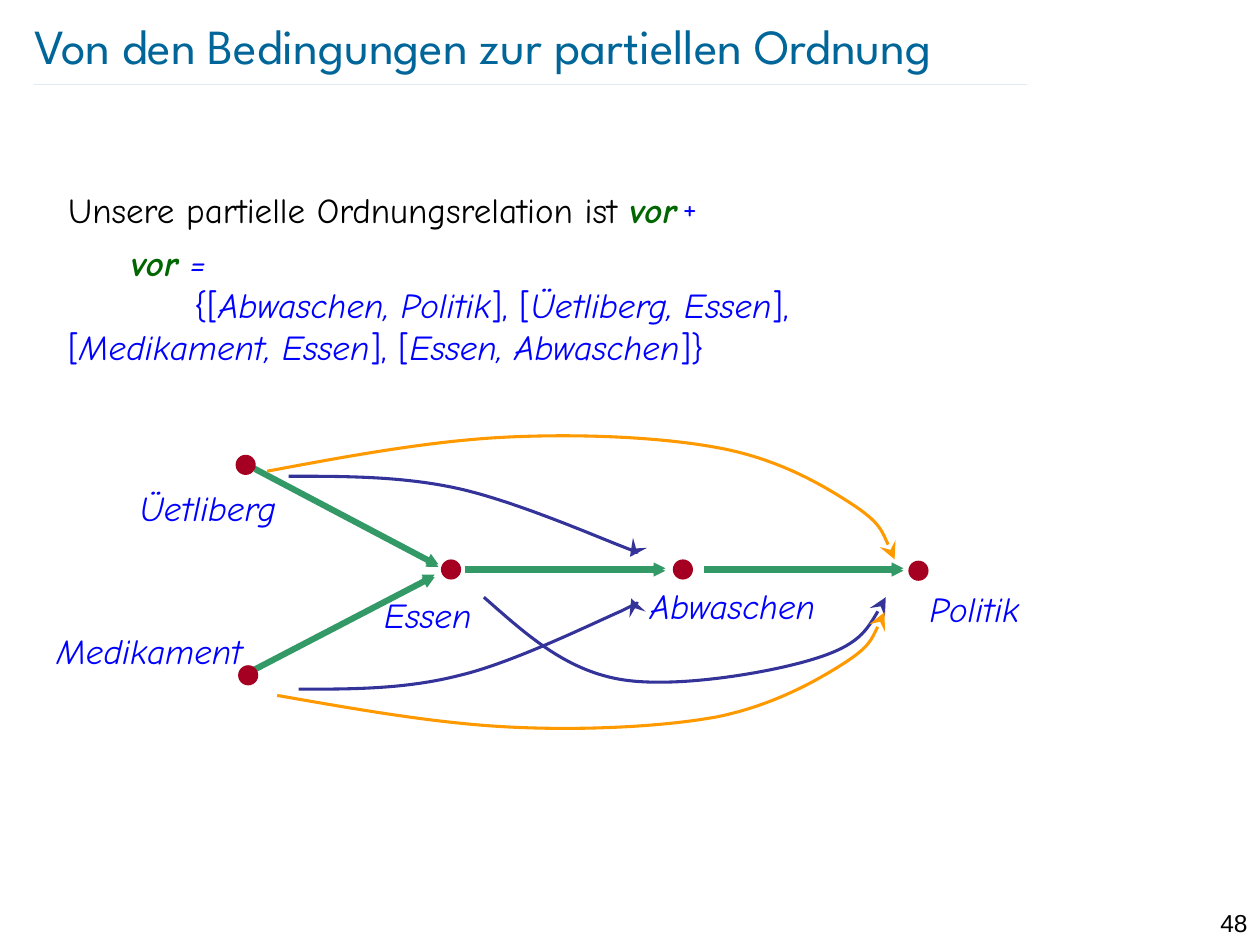
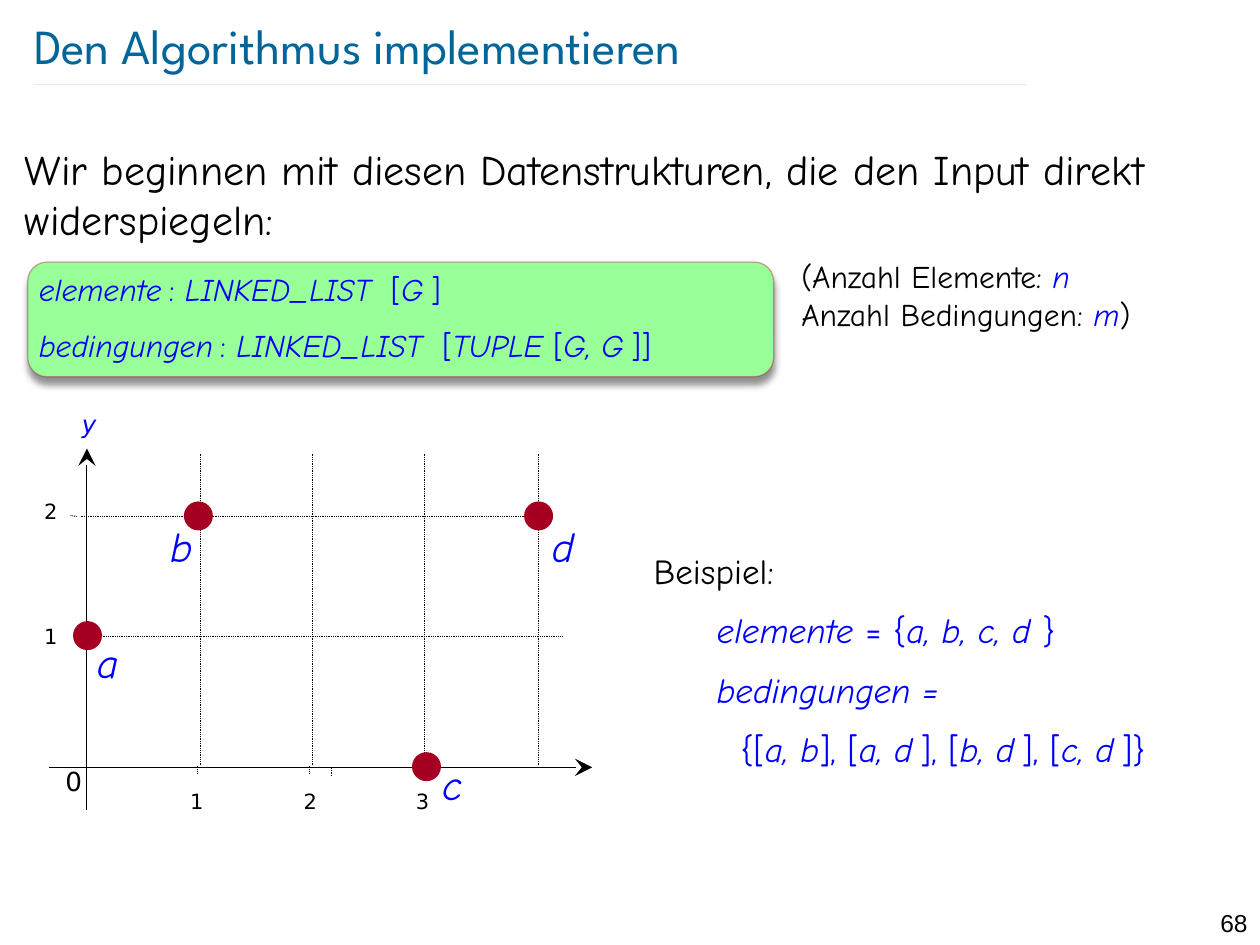
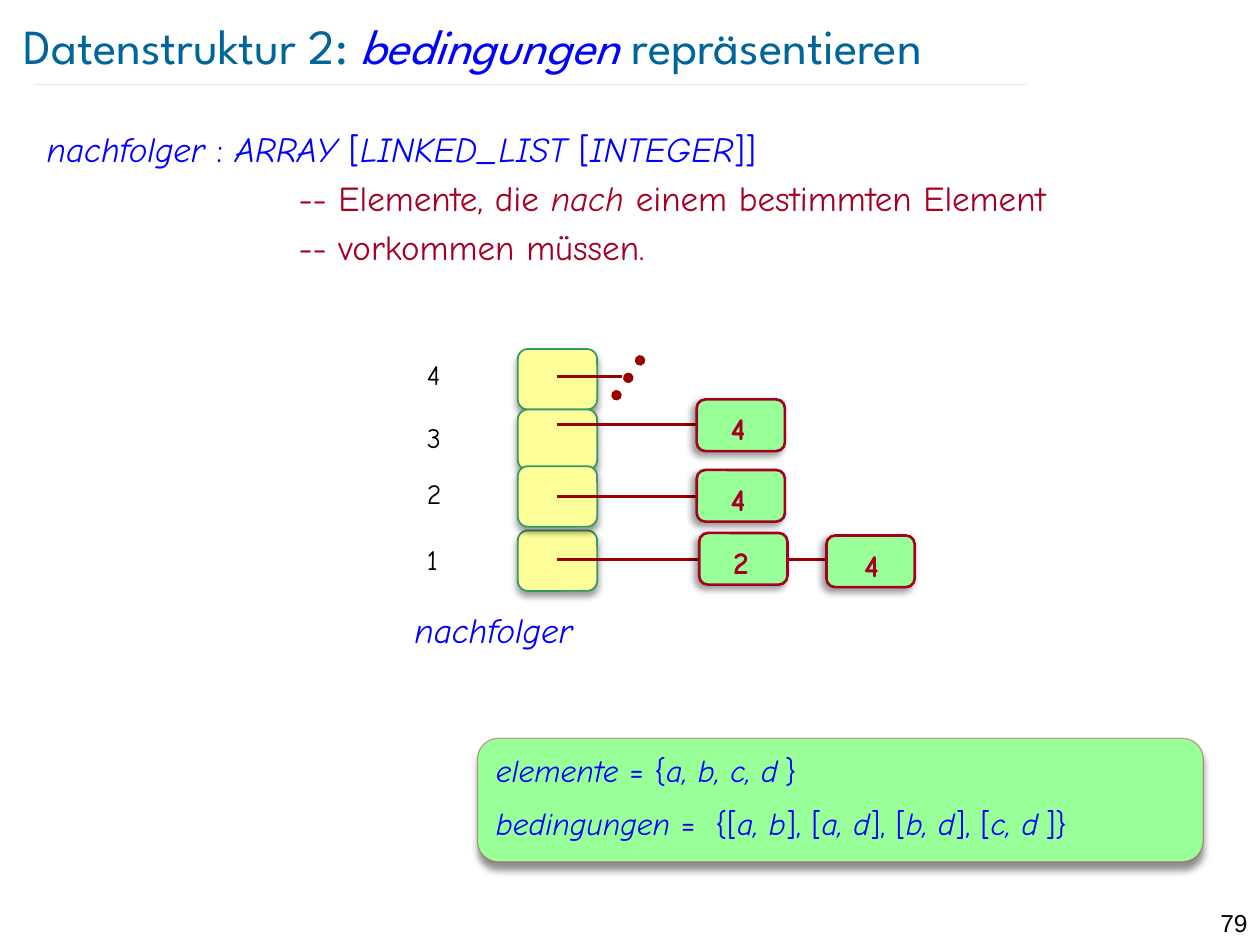
from dataclasses import dataclass
from itertools import groupby
from typing import NamedTuple

from lxml import etree
from pptx import Presentation
from pptx.dml.color import RGBColor
from pptx.enum.dml import MSO_LINE
from pptx.enum.shapes import MSO_CONNECTOR, MSO_SHAPE
from pptx.enum.text import MSO_ANCHOR, MSO_AUTO_SIZE, PP_ALIGN
from pptx.oxml.ns import qn
from pptx.util import Emu, Pt

ELLIPSE = MSO_SHAPE.OVAL
ROUND_RECTANGLE = MSO_SHAPE.ROUNDED_RECTANGLE
STRAIGHT = MSO_CONNECTOR.STRAIGHT
DOTTED = MSO_LINE.ROUND_DOT
MIDDLE = MSO_ANCHOR.MIDDLE
TOP = MSO_ANCHOR.TOP
LEFT = PP_ALIGN.LEFT
RIGHT = PP_ALIGN.RIGHT
NO_FIT = MSO_AUTO_SIZE.NONE
EMU_PER_PX = 9144
NARROW_GAP = "~"
WIDE_GAP = "^"


@dataclass(frozen=True)
class Theme:
    heading_font: str = "League Spartan"
    body_font: str = "Comic Neue"
    axis_font: str = "DejaVu Sans"
    number_font: str = "Arial"
    heading: str = "006699"
    black: str = "000000"
    blue: str = "0000FF"
    dark_green: str = "006600"
    green: str = "339966"
    light_green: str = "99FF99"
    yellow: str = "FFFF99"
    red: str = "A50021"
    dark_red: str = "990000"
    indigo: str = "333399"
    orange: str = "FF9900"
    title_size: int = 28
    lead_size: int = 24
    body_size: int = 20
    code_size: int = 18
    index_size: int = 16
    number_size: int = 14
    axis_size: int = 12
    narrow_gap_size: int = 12
    superscript_size: int = 32


THEME = Theme()


class Box(NamedTuple):
    left: int
    top: int
    width: int
    height: int


class Span(NamedTuple):
    markup: str
    color: str = THEME.blue
    bold: bool = False
    size: int = 0
    baseline: int = 0


@dataclass(frozen=True)
class Style:
    size: int = THEME.body_size
    font: str = THEME.body_font
    space_before: int = 0
    line_spacing: float = 1.0
    align: PP_ALIGN = LEFT


@dataclass(frozen=True)
class Line:
    spans: tuple[Span, ...]
    indent: int = 0
    tabs: tuple[int, ...] = ()


@dataclass(frozen=True)
class Stroke:
    color: str
    width: float
    head: str = ""
    head_size: str = "med"
    dotted: bool = False
    cap: str = ""
    opacity: int = 100


@dataclass(frozen=True)
class Shadow:
    opacity: int
    blur: int
    distance: int
    angle: int


@dataclass(frozen=True)
class Edge:
    x1: int
    y1: int
    x2: int
    y2: int


class Label(NamedTuple):
    text: str
    box: Box


class Curve(NamedTuple):
    color: str
    points: tuple[tuple[int, int], ...]


class Node(NamedTuple):
    left: int
    top: int
    text: str
    inset: int = 25


class ListRow(NamedTuple):
    line_y: int
    line_end: int
    nodes: tuple[Node, ...]


TITLE_STROKE = Stroke(THEME.heading, 0.25, opacity=20)
GRID_STROKE = Stroke(THEME.black, 0.5, dotted=True)
AXIS_STROKE = Stroke(THEME.black, 0.5, head="stealth", head_size="lg")
ORDER_STROKE = Stroke(THEME.green, 2.25, head="triangle")
LINK_STROKE = Stroke(THEME.dark_red, 1.5)
PANEL_STROKE = Stroke(THEME.red, 0.75, opacity=34)
PANEL_SHADOW = Shadow(43, 4, 4, 90)
CELL_SHADOW = Shadow(40, 4, 3, 90)
NODE_SHADOW = Shadow(40, 4, 3, 135)
PAGE_TITLE = Box(27, 12, 869, 48)
MARGINS = (10, 5, 10, 5)
NO_MARGINS = (0, 0, 0, 0)


def px(length: int) -> Emu:
    return Emu(length * EMU_PER_PX)


def rgb(color: str) -> RGBColor:
    return RGBColor.from_string(color)


def place(shape, box: Box) -> None:
    shape.left, shape.top, shape.width, shape.height = map(px, box)


def gap_marker(character: str) -> str:
    return character if character in (NARROW_GAP, WIDE_GAP) else ""


def add_runs(paragraph, text: str, italic: bool, span: Span, style: Style) -> None:
    for marker, characters in groupby(text, gap_marker):
        run = paragraph.add_run()
        run.text = " " if marker else "".join(characters)
        run.font.name = style.font
        size = THEME.narrow_gap_size if marker == NARROW_GAP else span.size or style.size
        run.font.size = Pt(size)
        run.font.color.rgb = rgb(span.color)
        run.font.bold = span.bold
        run.font.italic = italic
        if marker == WIDE_GAP:
            run.font._element.set("spc", "550")
        if span.baseline:
            run.font._element.set("baseline", str(span.baseline * 1000))


def add_spans(paragraph, spans: tuple[Span, ...], style: Style) -> None:
    for span in spans:
        for row_index, row in enumerate(span.markup.split("\n")):
            if row_index:
                paragraph.add_line_break()
            for part_index, part in enumerate(row.split("*")):
                add_runs(paragraph, part, part_index % 2 == 1, span, style)


def write(shape, lines: tuple[Line, ...], style: Style,
          margins: tuple[int, ...] = MARGINS, anchor: MSO_ANCHOR = TOP, wrap: bool = True) -> None:
    frame = shape.text_frame
    frame.auto_size = NO_FIT
    frame.word_wrap = wrap
    frame.vertical_anchor = anchor
    frame.margin_left, frame.margin_top, frame.margin_right, frame.margin_bottom = map(px, margins)
    for index, line in enumerate(lines):
        paragraph = frame.add_paragraph() if index else frame.paragraphs[0]
        properties = paragraph._p.get_or_add_pPr()
        properties.set("marL", str(px(line.indent)))
        properties.set("indent", "0")
        etree.SubElement(properties, qn("a:buNone"))
        if line.tabs:
            stops = etree.SubElement(properties, qn("a:tabLst"))
            for position in line.tabs:
                etree.SubElement(stops, qn("a:tab"), pos=str(px(position)), algn="l")
        paragraph.alignment = style.align
        paragraph.line_spacing = style.line_spacing
        paragraph.space_before = Pt(style.space_before if index else 0)
        add_spans(paragraph, line.spans, style)


def add_text(slide, box: Box, lines: tuple[Line, ...], style: Style,
             margins: tuple[int, ...] = MARGINS, wrap: bool = True) -> None:
    shape = slide.shapes.add_textbox(*map(px, box))
    write(shape, lines, style, margins, wrap=wrap)


def add_label(slide, label: Label, color: str, style: Style) -> None:
    add_text(slide, label.box, (Line((Span(label.text, color),)),), style, NO_MARGINS, False)


def apply_stroke(line, stroke: Stroke) -> None:
    line.color.rgb = rgb(stroke.color)
    line.width = Pt(stroke.width)
    if stroke.dotted:
        line.dash_style = DOTTED
    element = line._get_or_add_ln()
    if stroke.cap:
        element.set("cap", stroke.cap)
    if stroke.opacity < 100:
        color = next(element.iter(qn("a:srgbClr")))
        etree.SubElement(color, qn("a:alpha"), val=str(stroke.opacity * 1000))
    if stroke.head:
        etree.SubElement(element, qn("a:tailEnd"), type=stroke.head,
                         w=stroke.head_size, len=stroke.head_size)


def add_line(slide, edge: Edge, stroke: Stroke) -> None:
    connector = slide.shapes.add_connector(
        STRAIGHT, px(edge.x1), px(edge.y1), px(edge.x2), px(edge.y2))
    apply_stroke(connector.line, stroke)
    etree.SubElement(connector._element.spPr, qn("a:effectLst"))


def add_curve(slide, curve: Curve) -> None:
    builder = slide.shapes.build_freeform(*curve.points[0], scale=float(EMU_PER_PX))
    builder.add_line_segments(curve.points[1:], close=False)
    shape = builder.convert_to_shape()
    path = next(shape._element.iter(qn("a:path")))
    segments = path.findall(qn("a:lnTo"))
    for start in range(0, len(segments), 3):
        bezier = etree.SubElement(path, qn("a:cubicBezTo"))
        for segment in segments[start:start + 3]:
            bezier.append(segment[0])
            path.remove(segment)
    shape.shadow.inherit = False
    shape.fill.background()
    apply_stroke(shape.line, Stroke(curve.color, 1.75, head="stealth", head_size="lg"))


def add_dot(slide, left: int, top: int, size: int) -> None:
    dot = slide.shapes.add_shape(ELLIPSE, *map(px, (left, top, size, size)))
    dot.shadow.inherit = False
    dot.fill.solid()
    dot.fill.fore_color.rgb = rgb(THEME.red)
    dot.line.fill.background()


def add_panel(slide, box: Box, fill: str, stroke: Stroke, shadow: Shadow):
    panel = slide.shapes.add_shape(ROUND_RECTANGLE, *map(px, box))
    panel.fill.solid()
    panel.fill.fore_color.rgb = rgb(fill)
    apply_stroke(panel.line, stroke)
    panel.shadow.inherit = False
    effects = panel._element.spPr.find(qn("a:effectLst"))
    outer = etree.SubElement(
        effects, qn("a:outerShdw"), blurRad=str(Pt(shadow.blur)), dist=str(Pt(shadow.distance)),
        dir=str(shadow.angle * 60000), algn="ctr", rotWithShape="0")
    color = etree.SubElement(outer, qn("a:srgbClr"), val=THEME.black)
    etree.SubElement(color, qn("a:alpha"), val=str(shadow.opacity * 1000))
    return panel


def start_slide(presentation, number: str, title: tuple[Span, ...], title_box: Box,
                body_box: Box, body: tuple[Line, ...], body_style: Style):
    slide = presentation.slides.add_slide(presentation.slide_layouts[1])
    add_line(slide, Edge(27, 67, 815, 67), TITLE_STROKE)
    place(slide.shapes.title, title_box)
    write(slide.shapes.title, (Line(title),), Style(THEME.title_size, THEME.heading_font),
          NO_MARGINS, MIDDLE)
    place(slide.placeholders[1], body_box)
    write(slide.placeholders[1], body, body_style)
    add_text(slide, Box(945, 716, 55, 24), (Line((Span(number, THEME.black),)),),
             Style(THEME.number_size, THEME.number_font, align=RIGHT))
    return slide


def build_order_slide(presentation) -> None:
    relation = Span("*vor*", THEME.dark_green, True)
    body = (
        Line((Span("Unsere partielle Ordnungsrelation ist ", THEME.black), relation,
              Span(" ", size=10), Span("+", size=THEME.superscript_size, baseline=8))),
        Line((Span("\t"), relation, Span(
            "* =*\n\t\t{[*Abwaschen, Politik*], [*Üetliberg, Essen*],"
            "\n[*Medikament, Essen*], [*Essen, Abwaschen*]}")), tabs=(100, 200)),
    )
    slide = start_slide(
        presentation, "48", (Span("Von den Bedingungen zur partiellen Ordnung", THEME.heading),),
        PAGE_TITLE, Box(44, 128, 826, 462), body, Style(space_before=4))
    edges = (Edge(202, 371, 348, 448), Edge(199, 532, 345, 456),
             Edge(369, 451, 528, 451), Edge(559, 451, 717, 451))
    for shift in (0, 2):
        for edge in edges:
            add_line(slide, Edge(edge.x1, edge.y1 + shift, edge.x2, edge.y2 + shift), ORDER_STROKE)
    curves = (
        Curve(THEME.indigo, ((229, 378), (273, 378), (317, 378), (360, 387), (404, 396),
                             (469, 424), (492, 433), (515, 442), (508, 442), (500, 442))),
        Curve(THEME.indigo, ((237, 547), (280, 547), (322, 547), (365, 536), (407, 526),
                             (470, 495), (493, 485), (515, 474), (508, 475), (501, 475))),
        Curve(THEME.indigo, ((384, 474), (416, 502), (447, 531), (491, 539), (534, 547),
                             (611, 534), (646, 523), (682, 512), (693, 493), (703, 474))),
        Curve(THEME.orange, ((220, 552), (283, 563), (345, 574), (403, 577), (461, 580),
                             (525, 577), (569, 569), (613, 560), (647, 541), (669, 527),
                             (691, 513), (696, 499), (702, 486))),
        Curve(THEME.orange, ((212, 374), (276, 362), (341, 350), (401, 347), (461, 344),
                             (527, 347), (573, 356), (619, 365), (653, 385), (676, 400),
                             (699, 415), (704, 430), (710, 444))),
    )
    for curve in curves:
        add_curve(slide, curve)
    tasks = (
        Label("*Üetliberg*", Box(101, 381, 150, 44)),
        Label("*Medikament*", Box(35, 495, 191, 44)),
        Label("*Essen*", Box(295, 466, 122, 43)),
        Label("*Abwaschen*", Box(506, 459, 173, 44)),
        Label("*Politik*", Box(728, 461, 114, 43)),
    )
    for task in tasks:
        add_text(slide, task.box, (Line((Span(task.text),)),), Style())
    for left, top in ((187, 361), (189, 528), (350, 444), (534, 444), (721, 445)):
        add_dot(slide, left, top, 16)


def build_input_slide(presentation) -> None:
    body = (
        Line((Span("(Anzahl Elemente: ", THEME.black), Span("*n*"))),
        Line((Span("Anzahl Bedingungen: ", THEME.black), Span("*m*"), Span(")", THEME.black))),
    )
    slide = start_slide(
        presentation, "68", (Span("Den Algorithmus implementieren", THEME.heading),), PAGE_TITLE,
        Box(626, 205, 358, 91), body, Style(THEME.code_size, space_before=4, line_spacing=0.8))
    add_panel(slide, Box(22, 208, 592, 91), THEME.light_green, PANEL_STROKE, PANEL_SHADOW)
    declarations = ("*elemente~*: *LINKED_LIST^*[*G~*]",
                    "*bedingungen~*:* LINKED_LIST^*[*TUPLE* [*G, G~*]]")
    for index, declaration in enumerate(declarations):
        add_text(slide, Box(21, 209 + 45 * index, 688, 45), (Line((Span(declaration),)),),
                 Style(THEME.code_size))
    lead = "Wir beginnen mit diesen Datenstrukturen, die den Input direkt widerspiegeln:"
    add_text(slide, Box(10, 109, 946, 91), (Line((Span(lead, THEME.black),)),),
             Style(THEME.lead_size))
    example = (
        Line((Span("Beispiel:", THEME.black),)),
        Line((Span("*elemente* = {*a, b, c, d* }"),), 50),
        Line((Span("*bedingungen =*"),), 50),
        Line((Span("{[*a, b*], [*a, d~*], [*b, d~*], [*c, d~*]}"),), 69),
    )
    add_text(slide, Box(509, 431, 464, 195), example, Style(space_before=10))

    for column in range(4):
        x = 159 + column * 268 // 3
        add_line(slide, Edge(x, 360, x, 607), GRID_STROKE)
    for edge in (Edge(56, 409, 61, 410), Edge(73, 505, 447, 505), Edge(64, 410, 438, 410),
                 Edge(263, 616, 263, 609), Edge(157, 614, 157, 607), Edge(246, 614, 246, 607)):
        add_line(slide, edge, GRID_STROKE)
    for edge in (Edge(69, 643, 69, 356), Edge(39, 609, 470, 609)):
        add_line(slide, edge, AXIS_STROKE)
    for left, top in ((146, 398), (58, 493), (327, 597), (416, 398)):
        add_dot(slide, left, top, 23)
    for text, left, top in (("1", 35, 495), ("2", 35, 396),
                            ("1", 151, 626), ("2", 241, 626), ("3", 330, 626)):
        add_label(slide, Label(text, Box(left, top, 11, 20)), THEME.black,
                  Style(THEME.axis_size, THEME.axis_font))
    add_label(slide, Label("0", Box(52, 607, 13, 25)), THEME.black, Style(15, THEME.axis_font))
    add_label(slide, Label("*y*", Box(65, 325, 12, 24)), THEME.blue, Style(14, THEME.axis_font))
    for text, left, top in (("*b*", 135, 413), ("*a*", 77, 505), ("*c*", 351, 602),
                            ("*d*", 438, 413)):
        add_label(slide, Label(text, Box(left, top, 20, 40)), THEME.blue, Style(THEME.lead_size))


def build_successor_slide(presentation) -> None:
    title = (Span("Datenstruktur 2: ", THEME.heading), Span("*bedingungen *"),
             Span("repräsentieren", THEME.heading))
    body = (
        Line((Span("*nachfolger* : *ARRAY* [*LINKED_LIST* [*INTEGER*]]"),)),
        Line((Span("-- Elemente, die *nach* einem bestimmten Element", THEME.red),), 200),
        Line((Span("-- vorkommen müssen.", THEME.red),), 200),
    )
    slide = start_slide(presentation, "79", title, Box(19, 12, 942, 48),
                        Box(27, 96, 940, 617), body, Style(space_before=4))
    for top in (421, 277, 325, 370):
        add_panel(slide, Box(411, top, 63, 48), THEME.yellow, Stroke(THEME.green, 1), CELL_SHADOW)
    for text, top in (("4", 279), ("3", 329), ("2", 373), ("1", 426)):
        add_text(slide, Box(329, top, 58, 37), (Line((Span(text, THEME.black),)),),
                 Style(THEME.index_size))
    add_line(slide, Edge(508, 286, 485, 320), Stroke(THEME.dark_red, 6, dotted=True, cap="rnd"))
    rows = (
        ListRow(299, 494, ()),
        ListRow(337, 623, (Node(553, 317, "4"),)),
        ListRow(394, 623, (Node(553, 373, "4"),)),
        ListRow(444, 699, (Node(555, 423, "2"), Node(656, 425, "4", 28))),
    )
    for row in rows:
        add_line(slide, Edge(442, row.line_y, row.line_end, row.line_y), LINK_STROKE)
        for node in row.nodes:
            panel = add_panel(slide, Box(node.left, node.top, 70, 41), THEME.light_green,
                              Stroke(THEME.red, 1.5), NODE_SHADOW)
            write(panel, (Line((Span(node.text, THEME.red, True),)),), Style(THEME.code_size),
                  (node.inset, 6, 0, 0))
    add_text(slide, Box(319, 478, 230, 43), (Line((Span("*nachfolger*"),)),), Style())
    panel = add_panel(slide, Box(379, 586, 576, 98), THEME.light_green, PANEL_STROKE, PANEL_SHADOW)
    definitions = (
        Line((Span("*elemente* = {*a, b, c, d~*}"),)),
        Line((Span("*bedingungen* =^{[*a, b*], [*a, d*], [*b, d*], [*c, d~*]}"),)),
    )
    write(panel, definitions, Style(THEME.code_size, space_before=9))


def main() -> None:
    presentation = Presentation()
    presentation.slide_width, presentation.slide_height = px(1000), px(750)
    build_order_slide(presentation)
    build_input_slide(presentation)
    build_successor_slide(presentation)
    presentation.save("out.pptx")


if __name__ == "__main__":
    main()
